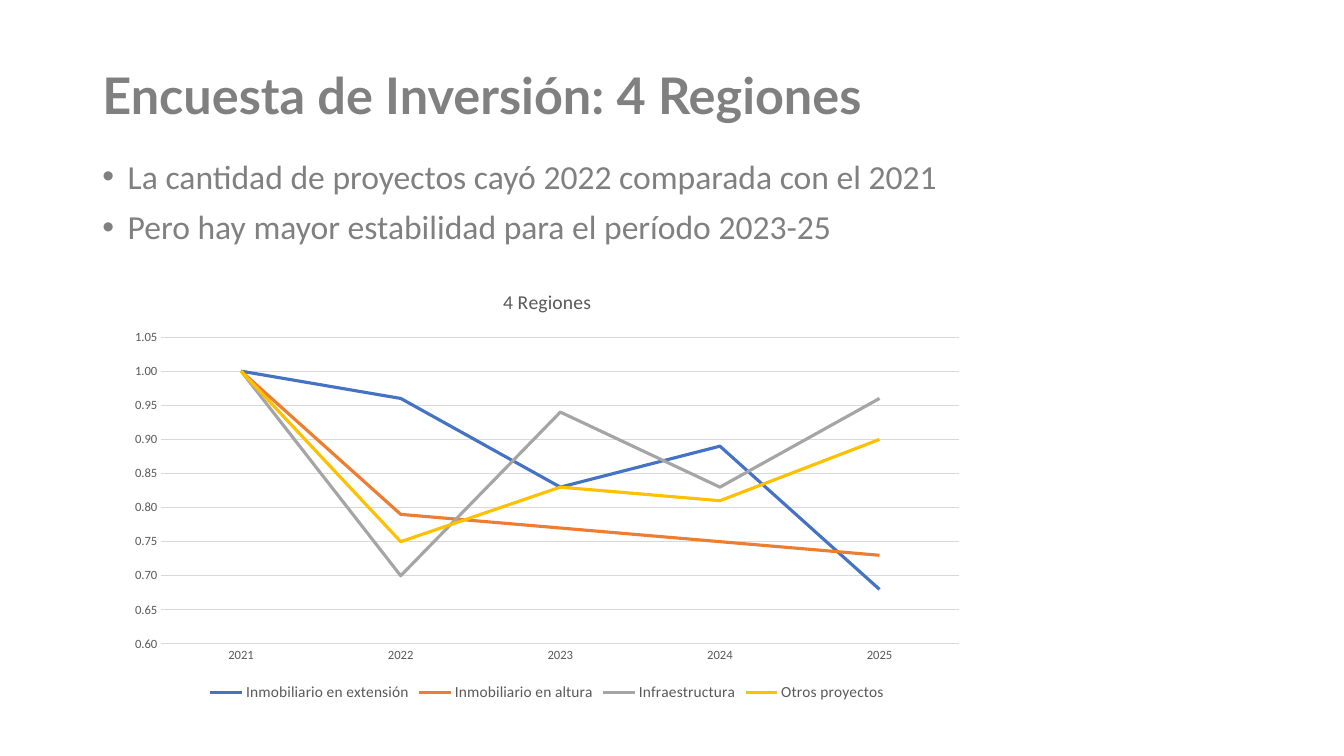
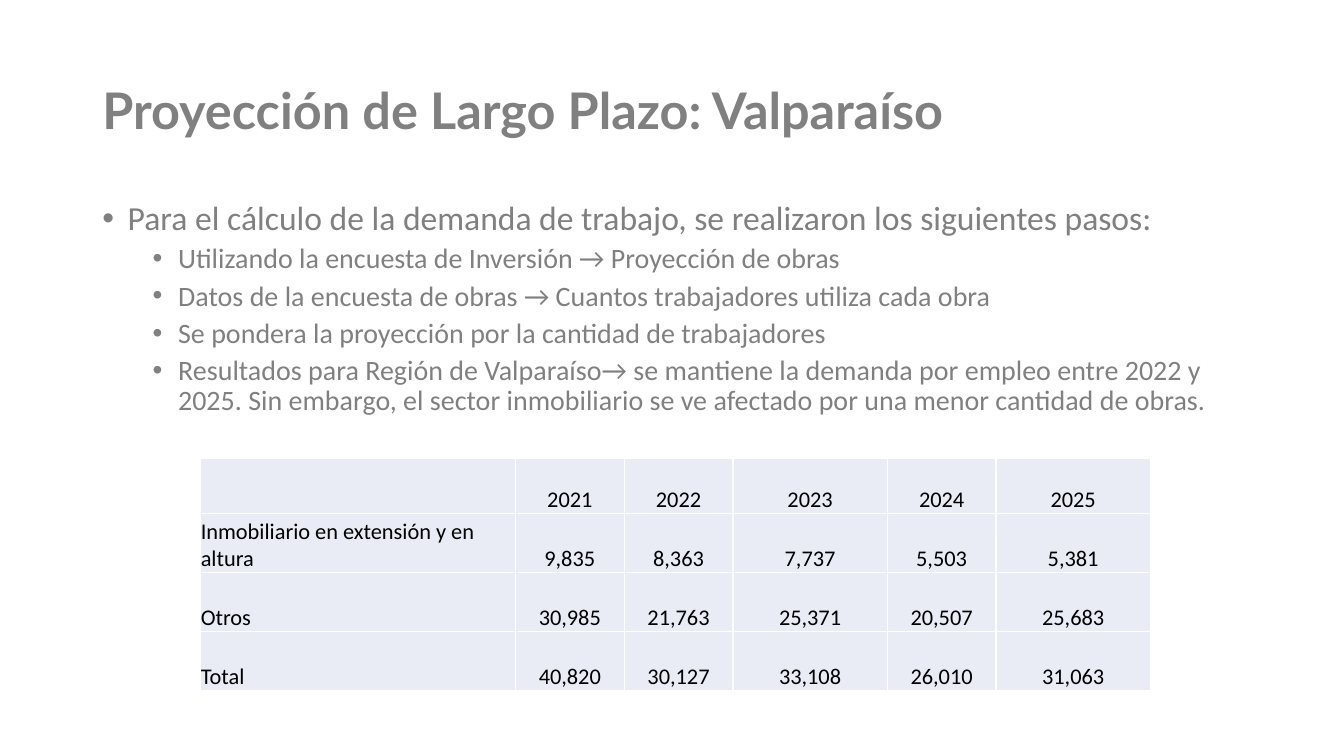
from lxml import etree
from pptx import Presentation
from pptx.chart.data import CategoryChartData
from pptx.dml.color import RGBColor
from pptx.enum.chart import XL_CHART_TYPE, XL_LEGEND_POSITION, XL_MARKER_STYLE, XL_TICK_MARK
from pptx.enum.text import MSO_ANCHOR, PP_ALIGN
from pptx.oxml.ns import qn
from pptx.util import Cm, Pt

LINE_CHART = XL_CHART_TYPE.LINE
LEGEND_BOTTOM = XL_LEGEND_POSITION.BOTTOM
NO_MARKER = XL_MARKER_STYLE.NONE
NO_TICK = XL_TICK_MARK.NONE
MIDDLE, BOTTOM = MSO_ANCHOR.MIDDLE, MSO_ANCHOR.BOTTOM
LEFT, CENTER = PP_ALIGN.LEFT, PP_ALIGN.CENTER

TITLE_FONT, BODY_FONT = "Lato", "Calibri"
TEXT_GREY, CHART_TEXT, GRID_GREY = "808080", "595959", "D9D9D9"
CELL_FILL, BORDER, BLACK = "E9EBF5", "FFFFFF", "000000"

MARGIN, CONTENT_WIDTH = Cm(2.33), Cm(29.21)
TITLE_TOP = Cm(1.02)
# For each bullet level: left indent, text size, space before
BULLET_LEVELS = [(Cm(0.64), Pt(24), Pt(10)), (Cm(1.91), Pt(20), Pt(5))]
BULLET_HANG = Cm(0.64)


def style_font(font, size, color, name=BODY_FONT, bold=False):
    font.size, font.name, font.bold = size, name, bold
    font.color.rgb = RGBColor.from_string(color)


def add_content_slide(title, title_height, body_top, body_height, bullets):
    """Add a slide with a title and (level, text) bullets."""
    slide = prs.slides.add_slide(prs.slide_layouts[6])

    heading = slide.shapes.add_textbox(MARGIN, TITLE_TOP, CONTENT_WIDTH, title_height).text_frame
    heading.word_wrap = True
    heading.vertical_anchor = MIDDLE
    paragraph = heading.paragraphs[0]
    paragraph.line_spacing = 0.9
    run = paragraph.add_run()
    run.text = title
    style_font(run.font, Pt(36), TEXT_GREY, TITLE_FONT, bold=True)

    body = slide.shapes.add_textbox(MARGIN, body_top, CONTENT_WIDTH, body_height).text_frame
    body.word_wrap = True
    for index, (level, text) in enumerate(bullets):
        indent, size, space_before = BULLET_LEVELS[level]
        paragraph = body.add_paragraph() if index else body.paragraphs[0]
        properties = paragraph._p.get_or_add_pPr()
        properties.set("marL", str(indent))
        properties.set("indent", str(-BULLET_HANG))
        etree.SubElement(properties, qn("a:buFont"), typeface="Arial")
        etree.SubElement(properties, qn("a:buChar"), char="•")
        paragraph.level = level
        paragraph.line_spacing = 0.9
        if index:
            paragraph.space_before = space_before
        run = paragraph.add_run()
        run.text = text
        style_font(run.font, size, TEXT_GREY)
    return slide


prs = Presentation()
prs.slide_width, prs.slide_height = Cm(33.87), Cm(19.05)

# Slide 1: investment survey
survey_slide = add_content_slide(
    "Encuesta de Inversión: 4 Regiones", Cm(2.9), Cm(3.91), Cm(13.23),
    [
        (0, "La cantidad de proyectos cayó 2022 comparada con el 2021"),
        (0, "Pero hay mayor estabilidad para el período 2023-25"),
    ],
)

PROJECT_TYPES = [
    ("Inmobiliario en extensión", "4472C4", (1, 0.96, 0.83, 0.89, 0.68)),
    ("Inmobiliario en altura", "ED7D31", (1, 0.79, 0.77, 0.75, 0.73)),
    ("Infraestructura", "A5A5A5", (1, 0.7, 0.94, 0.83, 0.96)),
    ("Otros proyectos", "FFC000", (1, 0.75, 0.83, 0.81, 0.9)),
]
YEARS = ["2021", "2022", "2023", "2024", "2025"]

survey_data = CategoryChartData(number_format="0.00")
survey_data.categories = YEARS
for name, _, values in PROJECT_TYPES:
    survey_data.add_series(name, values)
survey = survey_slide.shapes.add_chart(
    LINE_CHART, Cm(2.97), Cm(6.83), Cm(21.64), Cm(10.95), survey_data
).chart
style_font(survey.font, Pt(10), BLACK)

survey.has_title = True
run = survey.chart_title.text_frame.paragraphs[0].add_run()
run.text = "4 Regiones"
style_font(run.font, Pt(14), CHART_TEXT)
survey.chart_title.include_in_layout = False

survey.has_legend = True
survey.legend.position = LEGEND_BOTTOM
survey.legend.include_in_layout = False
style_font(survey.legend.font, Pt(11), CHART_TEXT)

year_axis, index_axis = survey.category_axis, survey.value_axis
for axis in (year_axis, index_axis):
    axis.major_tick_mark = axis.minor_tick_mark = NO_TICK
    style_font(axis.tick_labels.font, Pt(9), CHART_TEXT)
index_axis.minimum_scale, index_axis.maximum_scale = 0.6, 1.05
index_axis.major_unit = 0.05
index_axis.tick_labels.number_format = "0.00"
index_axis.tick_labels.number_format_is_linked = False
index_axis.format.line.fill.background()
for line in (year_axis.format.line, index_axis.major_gridlines.format.line):
    line.width = Pt(0.75)
    line.color.rgb = RGBColor.from_string(GRID_GREY)

survey.plots[0].vary_by_categories = False
for series, (_, color, _) in zip(survey.plots[0].series, PROJECT_TYPES):
    series.smooth = False
    series.marker.style = NO_MARKER
    series.format.line.width = Pt(2.25)
    series.format.line.color.rgb = RGBColor.from_string(color)

# Slide 2: long-term projection
projection_slide = add_content_slide(
    "Proyección de Largo Plazo: Valparaíso", Cm(3.68), Cm(4.95), Cm(10.64),
    [
        (0, "Para el cálculo de la demanda de trabajo, se realizaron los siguientes pasos:"),
        (1, "Utilizando la encuesta de Inversión → Proyección de obras"),
        (1, "Datos de la encuesta de obras → Cuantos trabajadores utiliza cada obra"),
        (1, "Se pondera la proyección por la cantidad de trabajadores"),
        (1, "Resultados para Región de Valparaíso→ se mantiene la demanda por empleo entre "
            "2022 y 2025. Sin embargo, el sector inmobiliario se ve afectado por una menor "
            "cantidad de obras."),
    ],
)

JOBS = [
    ["", *YEARS],
    ["Inmobiliario en extensión y en altura", "9,835", "8,363", "7,737", "5,503", "5,381"],
    ["Otros", "30,985", "21,763", "25,371", "20,507", "25,683"],
    ["Total", "40,820", "30,127", "33,108", "26,010", "31,063"],
]
COLUMN_WIDTHS = [Cm(7.95), Cm(2.74), Cm(2.74), Cm(3.89), Cm(2.74), Cm(3.89)]
ROW_HEIGHTS = [Cm(1.4), Cm(1.49), Cm(1.49), Cm(1.49)]

jobs_table = projection_slide.shapes.add_table(
    len(JOBS), len(COLUMN_WIDTHS), Cm(5.04), Cm(11.54), sum(COLUMN_WIDTHS), sum(ROW_HEIGHTS)
).table
jobs_table.first_row = jobs_table.horz_banding = False
for column, width in zip(jobs_table.columns, COLUMN_WIDTHS):
    column.width = width
for row, height in zip(jobs_table.rows, ROW_HEIGHTS):
    row.height = height

for row_index, row_texts in enumerate(JOBS):
    for column_index, text in enumerate(row_texts):
        cell = jobs_table.cell(row_index, column_index)
        cell.fill.solid()
        cell.fill.fore_color.rgb = RGBColor.from_string(CELL_FILL)
        cell.vertical_anchor = BOTTOM
        cell.margin_left = cell.margin_right = cell.margin_top = Cm(0.02)
        cell.margin_bottom = 0
        properties = cell._tc.get_or_add_tcPr()
        for position, side in enumerate(("lnL", "lnR", "lnT", "lnB")):
            border = etree.Element(qn(f"a:{side}"), w=str(Pt(1)))
            border_fill = etree.SubElement(border, qn("a:solidFill"))
            etree.SubElement(border_fill, qn("a:srgbClr"), val=BORDER)
            properties.insert(position, border)
        if text:
            paragraph = cell.text_frame.paragraphs[0]
            paragraph.alignment = CENTER if column_index else LEFT
            run = paragraph.add_run()
            run.text = text
            style_font(run.font, Pt(16), BLACK)

prs.save("out.pptx")
